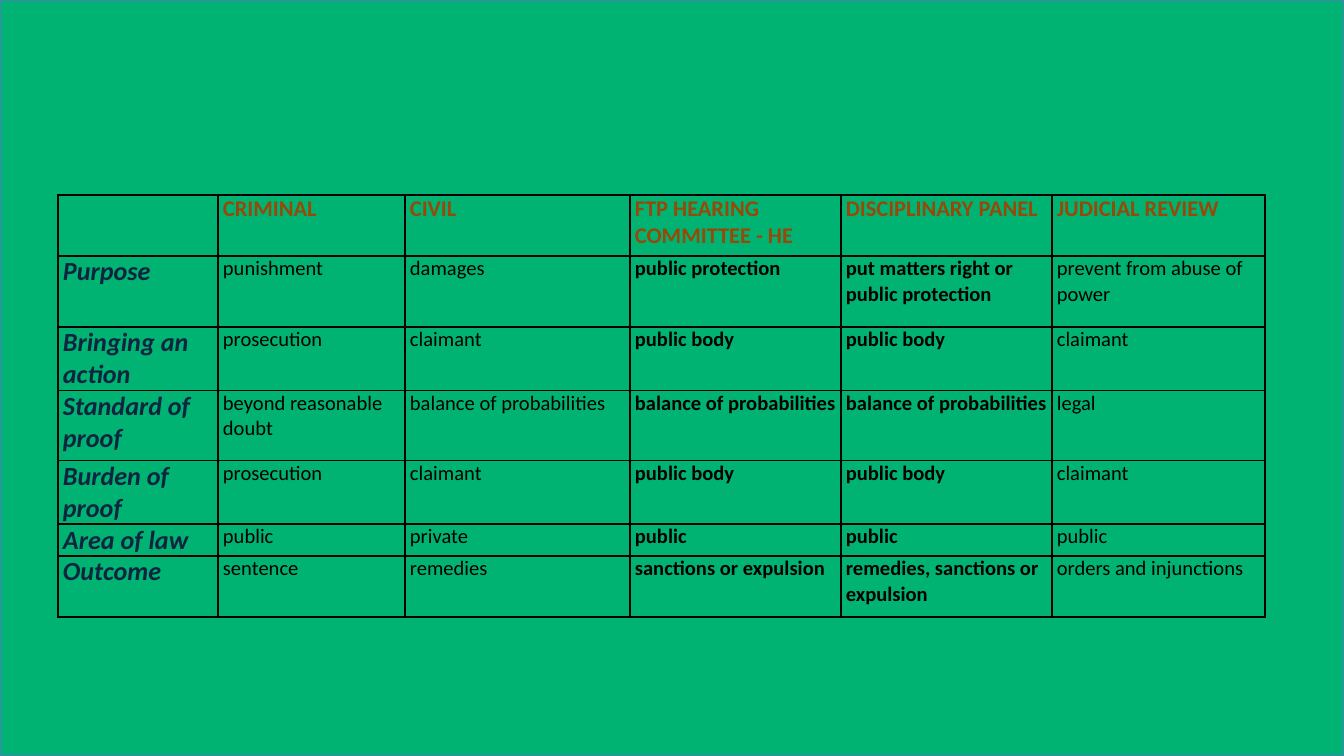
from lxml.etree import SubElement as Sub
from pptx import Presentation
from pptx.dml.color import RGBColor
from pptx.enum.shapes import MSO_SHAPE as Shape
from pptx.oxml.ns import qn
from pptx.util import Pt

PX = 914400 / 134.4
GREEN = RGBColor(0x00, 0xB3, 0x73)
BLUE = RGBColor(0x4B, 0x7E, 0xBC)
BROWN = RGBColor(0x98, 0x48, 0x07)
NAVY = RGBColor(0x0F, 0x24, 0x3E)
BLACK = RGBColor(0x00, 0x00, 0x00)

WIDTHS = [160, 187, 225, 211, 211, 213]
HEIGHTS = [61, 71, 63, 70, 63, 32, 61]
ROWS = [
    ["", "CRIMINAL", "CIVIL", "FTP HEARING COMMITTEE - HE",
     "DISCIPLINARY PANEL", "JUDICIAL REVIEW"],
    ["Purpose", "punishment", "damages", "public protection",
     "put matters right or public protection", "prevent from abuse of power"],
    ["Bringing an action", "prosecution", "claimant", "public body",
     "public body", "claimant"],
    ["Standard of proof", "beyond reasonable doubt", "balance of probabilities",
     "balance of probabilities", "balance of probabilities", "legal"],
    ["Burden of proof", "prosecution", "claimant", "public body",
     "public body", "claimant"],
    ["Area of law", "public", "private", "public", "public", "public"],
    ["Outcome", "sentence", "remedies", "sanctions or expulsion",
     "remedies, sanctions or expulsion", "orders and injunctions"],
]


def px(n):
    return round(n * PX)


def edge(cell):
    props = cell._tc.get_or_add_tcPr()
    for side in ("a:lnL", "a:lnR", "a:lnT", "a:lnB"):
        line = Sub(props, qn(side), w=str(Pt(1)))
        fill = Sub(line, qn("a:solidFill"))
        Sub(fill, qn("a:srgbClr"), val=str(BLACK))


deck = Presentation()
deck.slide_width = px(1344)
deck.slide_height = px(756)
slide = deck.slides.add_slide(deck.slide_layouts[6])

back = slide.shapes.add_shape(Shape.RECTANGLE, 0, 0, px(1344), px(756))
back.shadow.inherit = False
back.fill.solid()
back.fill.fore_color.rgb = GREEN
back.line.color.rgb = BLUE
back.line.width = Pt(0.75)

frame = slide.shapes.add_table(len(ROWS), len(WIDTHS), px(58), px(195),
                               px(sum(WIDTHS)), px(sum(HEIGHTS)))
table = frame.table
table.first_row = False
table.horz_banding = False
for col, width in zip(table.columns, WIDTHS):
    col.width = px(width)
for row, height in zip(table.rows, HEIGHTS):
    row.height = px(height)

for r, texts in enumerate(ROWS):
    for c, text in enumerate(texts):
        cell = table.cell(r, c)
        cell.margin_left = cell.margin_right = px(5)
        cell.margin_top = cell.margin_bottom = 0
        edge(cell)
        cell.fill.background()
        if not text:
            continue
        run = cell.text_frame.paragraphs[0].add_run()
        run.text = text
        if r == 0:
            size, color = 12, BROWN
        elif c == 0:
            size, color = 14, NAVY
        else:
            size, color = 11, BLACK
        font = run.font
        font.name = "Calibri"
        font.size = Pt(size)
        font.color.rgb = color
        font.bold = r == 0 or c in (0, 3, 4)
        font.italic = r > 0 and c == 0

deck.save("out.pptx")
